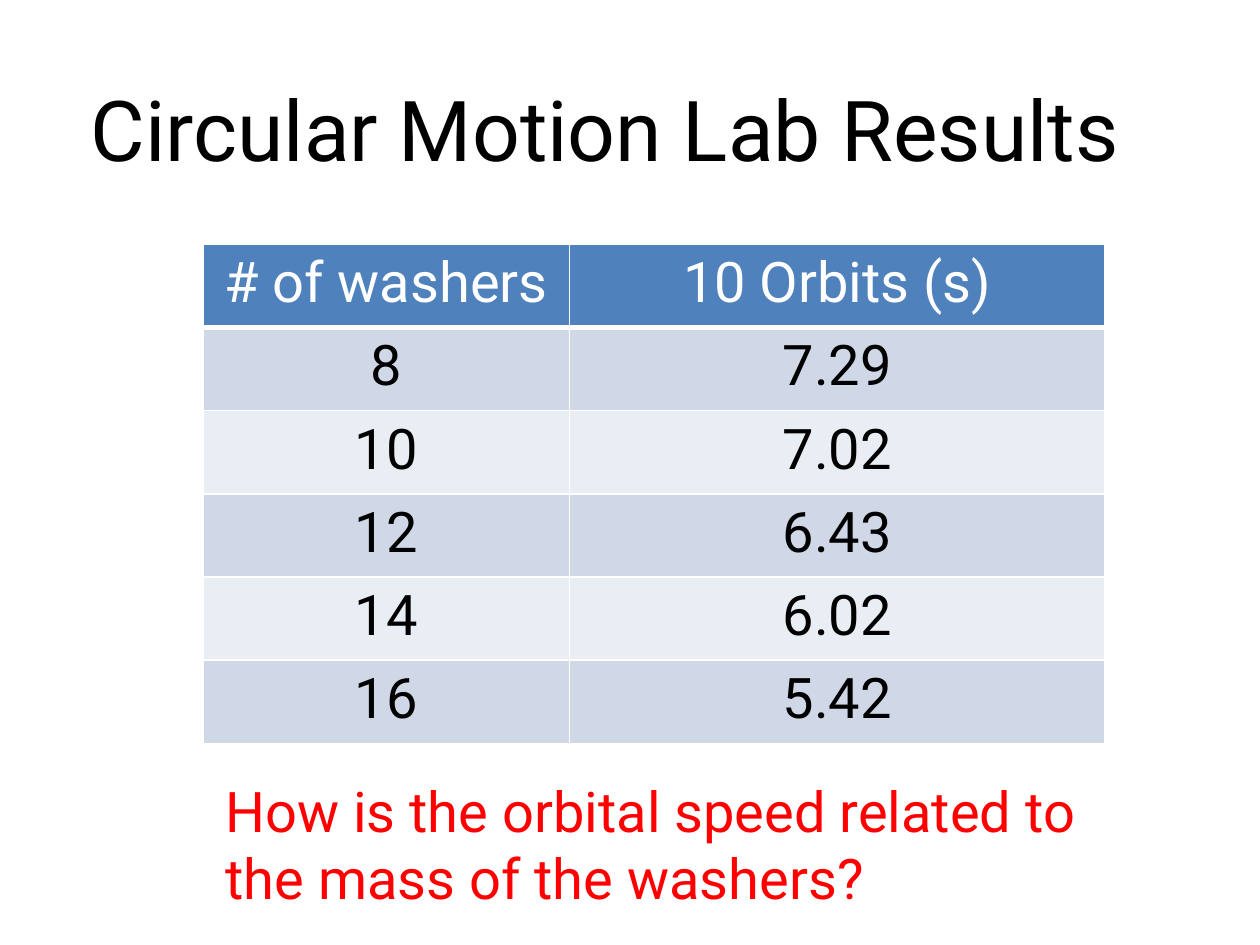
"""Build the circular motion lab results slide."""
import pptx
import pptx.dml.color
import pptx.enum.text
import pptx.oxml
import pptx.oxml.ns
import pptx.util

TITLE = "Circular Motion Lab Results"
ROWS = [
    ("# of washers", "10 Orbits (s)"),
    ("8", "7.29"),
    ("10", "7.02"),
    ("12", "6.43"),
    ("14", "6.02"),
    ("16", "5.42"),
]
ASK = "How is the orbital speed related to the mass of the washers?"
COLS = [2.91, 4.25]
HIGH = 0.66
FONT = "Roboto"
HUES = {
    "head": "4F81BD",
    "odd": "D0D8E8",
    "even": "E9EDF4",
    "white": "FFFFFF",
    "black": "000000",
    "red": "FF0000",
}

Inches = pptx.util.Inches
Align = pptx.enum.text.PP_ALIGN
Fit = pptx.enum.text.MSO_AUTO_SIZE


def color(name):
    return pptx.dml.color.RGBColor.from_string(HUES[name])


def write(frame, text, size, hue, align):
    frame.text = text
    para = frame.paragraphs[0]
    para.alignment = align
    font = para.runs[0].font
    font.name = FONT
    font.size = pptx.util.Pt(size)
    font.bold = False
    font.color.rgb = color(hue)


def border(cell, side, width):
    line = pptx.oxml.parse_xml(
        f'<a:ln{side} {pptx.oxml.ns.nsdecls("a")} w="{pptx.util.Pt(width)}">'
        f'<a:solidFill><a:srgbClr val="{HUES["white"]}"/></a:solidFill>'
        f'</a:ln{side}>')
    cell._tc.get_or_add_tcPr().append(line)


def add_title(slide):
    title = slide.shapes.title
    title.left, title.top = Inches(0.62), Inches(0.7)
    title.width, title.height = Inches(9), Inches(0.63)
    frame = title.text_frame
    write(frame, TITLE, 48, "black", Align.LEFT)
    frame.auto_size = Fit.NONE
    frame.vertical_anchor = pptx.enum.text.MSO_ANCHOR.MIDDLE


def add_table(slide):
    table = slide.shapes.add_table(
        len(ROWS), len(COLS), Inches(1.61), Inches(1.94),
        Inches(sum(COLS)), Inches(HIGH * len(ROWS))).table
    for col, width in zip(table.columns, COLS):
        col.width = Inches(width)
    for i, row in enumerate(ROWS):
        fill = "head" if i == 0 else "odd" if i % 2 else "even"
        for j, text in enumerate(row):
            cell = table.cell(i, j)
            write(cell.text_frame, text, 32,
                  "black" if i else "white", Align.CENTER)
            for side in "LRTB":
                border(cell, side, 3 if i == 0 and side == "B" else 1)
            cell.fill.solid()
            cell.fill.fore_color.rgb = color(fill)


def add_question(slide):
    box = slide.shapes.add_textbox(
        Inches(1.69), Inches(6.11), Inches(7.09), Inches(1.18))
    frame = box.text_frame
    frame.word_wrap = True
    frame.auto_size = Fit.SHAPE_TO_FIT_TEXT
    write(frame, ASK, 32, "red", Align.LEFT)


def main():
    deck = pptx.Presentation()
    deck.slide_width, deck.slide_height = Inches(10), Inches(7.5)
    slide = deck.slides.add_slide(deck.slide_layouts[5])
    add_title(slide)
    add_table(slide)
    add_question(slide)
    deck.save("out.pptx")


if __name__ == "__main__":
    main()
